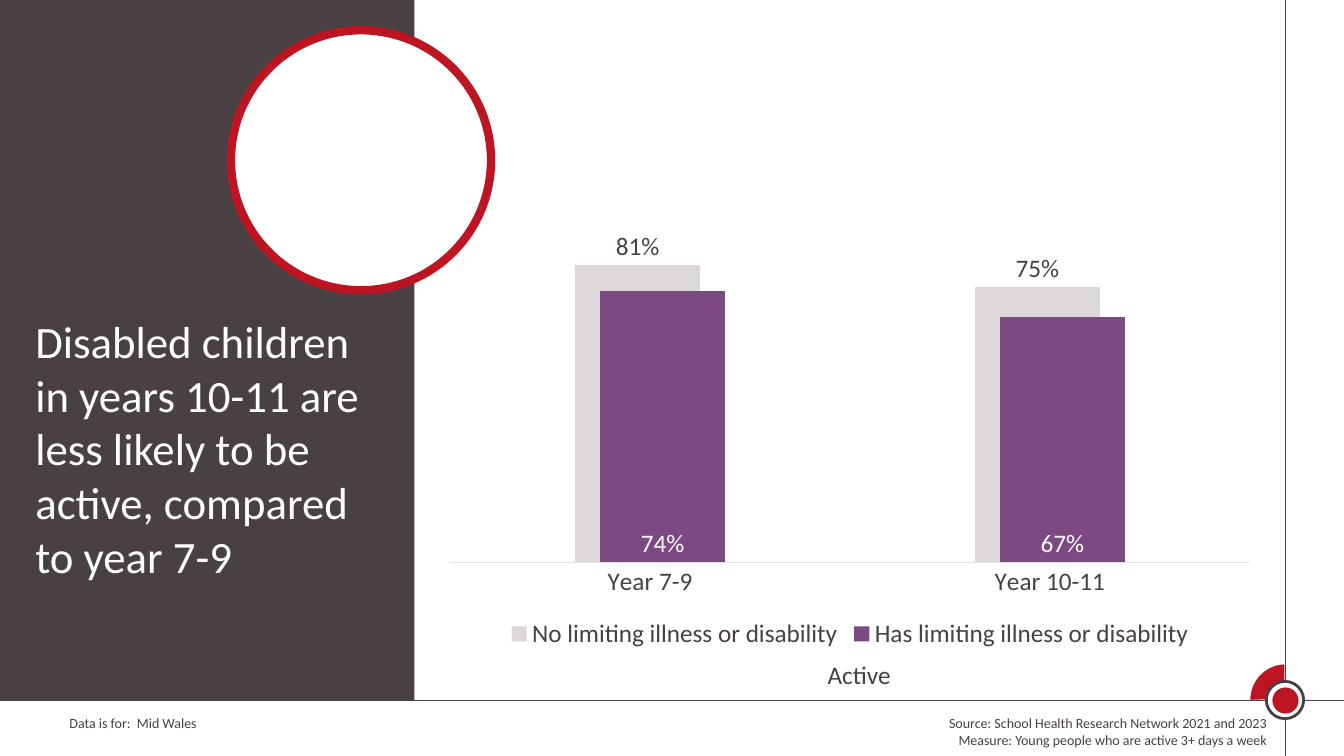
from pptx import Presentation
from pptx.chart.data import CategoryChartData
from pptx.dml.color import RGBColor
from pptx.enum import chart as ce, shapes, text
from pptx.oxml import parse_xml
from pptx.util import Inches, Pt

DARK = RGBColor(0x48, 0x40, 0x43)
RED = RGBColor(0xBD, 0x16, 0x22)
WHITE = RGBColor(0xFF, 0xFF, 0xFF)
GREY = RGBColor(0xDC, 0xD7, 0xD9)
PURPLE = RGBColor(0x7C, 0x49, 0x82)
AXIS = RGBColor(0xE5, 0xE1, 0xE3)
FONT = "Calibri"
EFFECTS = '<a:effectLst xmlns:a="http://schemas.openxmlformats.org/drawingml/2006/main"/>'
S = shapes.MSO_SHAPE

prs = Presentation()
prs.slide_width, prs.slide_height = Inches(13.33), Inches(7.5)
s = prs.slides.add_slide(prs.slide_layouts[5])


def add_shape(kind, x, y, w, h, fill, line=None, width=0):
    sp = s.shapes.add_shape(kind, Inches(x), Inches(y), Inches(w), Inches(h))
    sp.shadow.inherit = False
    sp.fill.solid()
    sp.fill.fore_color.rgb = fill
    if line is None:
        sp.line.fill.background()
    else:
        sp.line.color.rgb = line
        sp.line.width = Pt(width)
    return sp


def set_font(font, size, color):
    font.name, font.size = FONT, Pt(size)
    font.color.rgb = color


# Corner ornament on the crossing frame lines
pie = add_shape(S.PIE, 12.39, 6.58, 0.72, 0.72, RED, WHITE, 1.5)
pie.adjustments[0], pie.adjustments[1] = 106.617, 162
for x1, y1, x2, y2 in [(12.75, 0, 12.75, 7.5), (0, 6.95, 13.33, 6.95)]:
    line = s.shapes.add_connector(shapes.MSO_CONNECTOR.STRAIGHT, Inches(x1),
                                  Inches(y1), Inches(x2), Inches(y2))
    line.line.color.rgb = DARK
    line.line.width = Pt(1)
    line.element.spPr.append(parse_xml(EFFECTS))
add_shape(S.OVAL, 12.56, 6.76, 0.37, 0.37, WHITE, DARK, 2)
add_shape(S.OVAL, 12.62, 6.82, 0.26, 0.26, RED)

# Side panel and ring
add_shape(S.RECTANGLE, -0.01, 0, 4.12, 6.95, DARK)
add_shape(S.OVAL, 2.29, 0.3, 2.58, 2.58, WHITE, RED, 6)

# Title, raised above the panel
title = s.shapes.title
title.left, title.top = Inches(0.25), Inches(3.06)
title.width, title.height = Inches(3.54), Inches(3.33)
tf = title.text_frame
tf.text = "Disabled children in years 10-11 are less likely to be active, compared to year 7-9"
tf.word_wrap = True
tf.auto_size = text.MSO_AUTO_SIZE.NONE
tf.vertical_anchor = text.MSO_ANCHOR.TOP
tf.paragraphs[0].alignment = text.PP_ALIGN.LEFT
set_font(tf.paragraphs[0].runs[0].font, 32, WHITE)
title.element.getparent().append(title.element)

# Footer notes and chart caption
LEFT, RIGHT = text.PP_ALIGN.LEFT, text.PP_ALIGN.RIGHT
notes = [
    (0.59, 7.04, 4.39, 0.27, 10, LEFT, "Data is for:\u00a0 Mid Wales".replace("\u00a0", " ")),
    (6.19, 7.04, 6.47, 0.44, 10, RIGHT, "Source: School Health Research Network 2021 and 2023\n"
                                        "Measure: Young people who are active 3+ days a week"),
    (8.11, 6.49, 1.22, 0.4, 18, LEFT, "Active"),
]
for x, y, w, h, size, align, words in notes:
    tf = s.shapes.add_textbox(Inches(x), Inches(y), Inches(w), Inches(h)).text_frame
    tf.word_wrap = True
    tf.text = words
    for p in tf.paragraphs:
        p.alignment = align
        set_font(p.runs[0].font, size, DARK)

# Chart
data = CategoryChartData(number_format="0%")
data.categories = ["Year 7-9", "Year 10-11"]
data.add_series("No limiting illness or disability", [0.81, 0.75])
data.add_series("Has limiting illness or disability", [0.74, 0.67])
chart = s.shapes.add_chart(ce.XL_CHART_TYPE.COLUMN_CLUSTERED, Inches(4.3), Inches(1.85),
                           Inches(8.26), Inches(4.64), data).chart
chart.has_title = False
set_font(chart.font, 18, DARK)
chart.has_legend = True
chart.legend.position = ce.XL_LEGEND_POSITION.BOTTOM
chart.legend.include_in_layout = False
set_font(chart.legend.font, 18, DARK)

cat = chart.category_axis
cat.major_tick_mark = ce.XL_TICK_MARK.NONE
cat.format.line.color.rgb = AXIS
cat.format.line.width = Pt(0.75)
set_font(cat.tick_labels.font, 18, DARK)
val = chart.value_axis
val.minimum_scale, val.maximum_scale = 0, 1
val.has_major_gridlines = False
val.visible = False

plot = chart.plots[0]
plot.gap_width, plot.overlap = 200, 80
plot.vary_by_categories = False
POS = ce.XL_LABEL_POSITION
styles = [(GREY, DARK, POS.OUTSIDE_END), (PURPLE, WHITE, POS.INSIDE_BASE)]
for series, (fill, color, position) in zip(plot.series, styles):
    series.format.fill.solid()
    series.format.fill.fore_color.rgb = fill
    labels = series.data_labels
    labels.show_value = True
    labels.number_format, labels.number_format_is_linked = "0%", False
    labels.position = position
    set_font(labels.font, 18, color)

prs.save("out.pptx")
